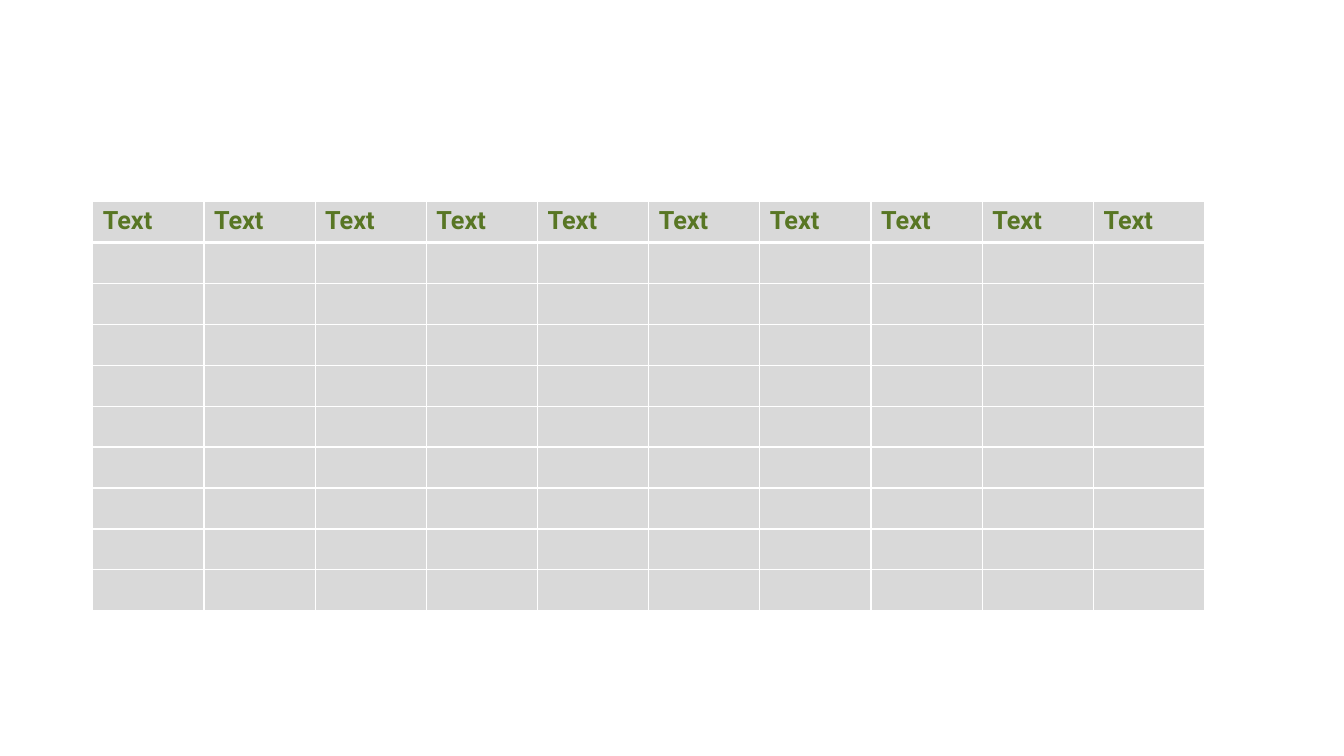
from lxml.etree import SubElement
from pptx import Presentation
from pptx.dml.color import RGBColor
from pptx.oxml.ns import qn
from pptx.util import Inches, Pt

# Content
HEADINGS = ["Text"] * 10
BODY_ROWS = 9

# Style
COLORS = {"cell": "D9D9D9", "heading": "587624", "border": "FFFFFF"}
FONT = "Roboto"
THIN, THICK = 1, 3
LEFT, TOP, WIDTH, HEIGHT = 0.92, 2, 11.03, 4.06


def add_borders(cell, top, bottom):
    """Draw the four cell edges; widths are in points."""
    properties = cell._tc.get_or_add_tcPr()
    for edge, width in (("lnL", THIN), ("lnR", THIN), ("lnT", top), ("lnB", bottom)):
        line = SubElement(properties, qn(f"a:{edge}"), w=str(Pt(width)))
        fill = SubElement(line, qn("a:solidFill"))
        SubElement(fill, qn("a:srgbClr"), val=COLORS["border"])


def style_cell(cell, row):
    # The thick rule lies between the heading row and the first body row
    add_borders(cell, THICK if row == 1 else THIN, THICK if row == 0 else THIN)
    cell.fill.solid()
    cell.fill.fore_color.rgb = RGBColor.from_string(COLORS["cell"])


def write_heading(cell, text):
    cell.text_frame.text = text
    font = cell.text_frame.paragraphs[0].runs[0].font
    font.name = FONT
    font.size = Pt(18)
    font.bold = True
    font.color.rgb = RGBColor.from_string(COLORS["heading"])


def main():
    deck = Presentation()
    deck.slide_width, deck.slide_height = Inches(13.33), Inches(7.5)
    page = deck.slides.add_slide(deck.slide_layouts[6])

    # Table with equal columns and rows
    table = page.shapes.add_table(
        BODY_ROWS + 1, len(HEADINGS),
        Inches(LEFT), Inches(TOP), Inches(WIDTH), Inches(HEIGHT),
    ).table
    for row, table_row in enumerate(table.rows):
        for cell in table_row.cells:
            style_cell(cell, row)

    # Heading row
    for column, text in enumerate(HEADINGS):
        write_heading(table.cell(0, column), text)

    deck.save("out.pptx")


if __name__ == "__main__":
    main()
